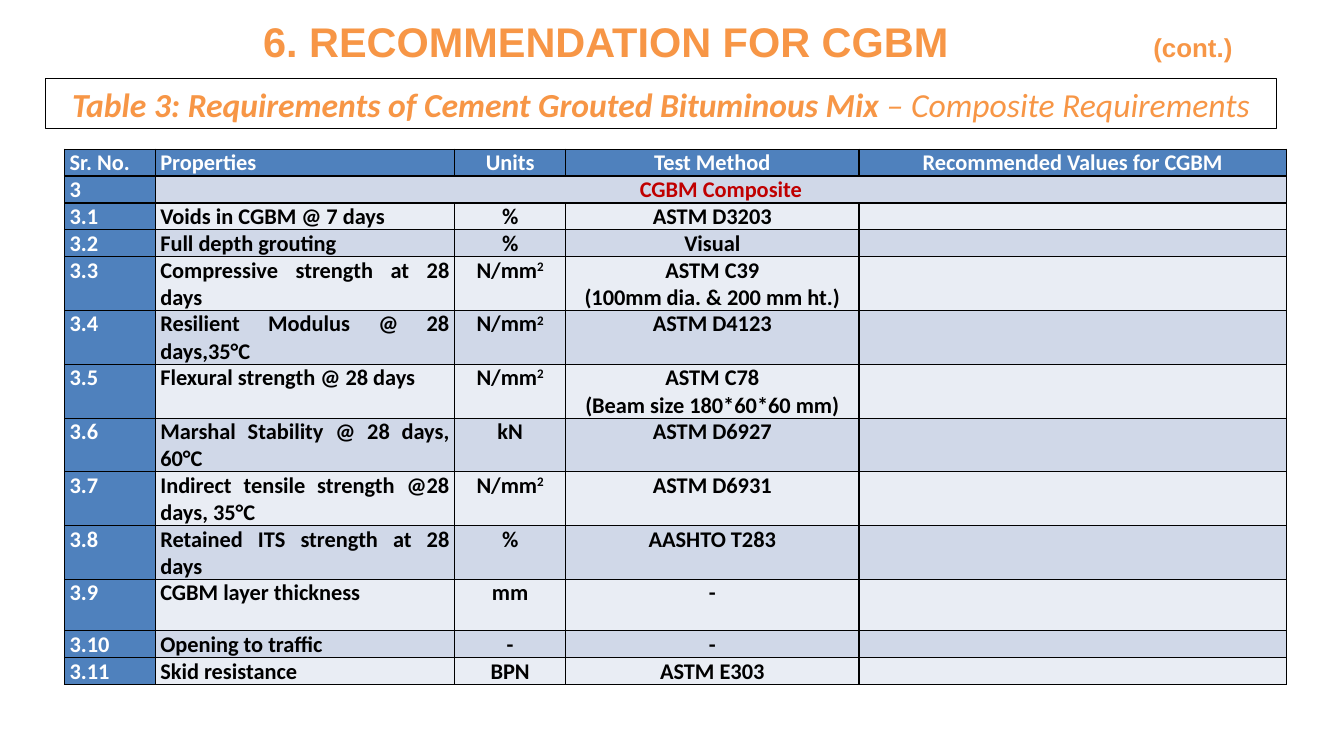
from dataclasses import dataclass
from typing import Any

from lxml.etree import SubElement
from pptx import Presentation
from pptx.dml.color import RGBColor
from pptx.enum.shapes import MSO_SHAPE as Shape
from pptx.enum.text import MSO_ANCHOR as Anchor, PP_ALIGN as Align
from pptx.oxml import parse_xml
from pptx.oxml.ns import nsdecls, qn
from pptx.util import Inches, Pt

ORANGE = RGBColor(0xF7, 0x96, 0x46)
BLUE = RGBColor(0x4F, 0x81, 0xBD)
DARK = RGBColor(0xD0, 0xD8, 0xE8)
LIGHT = RGBColor(0xE9, 0xED, 0xF4)
RED = RGBColor(0xC0, 0x00, 0x00)
WHITE = RGBColor(0xFF, 0xFF, 0xFF)
BLACK = RGBColor(0x00, 0x00, 0x00)

HEAD = {"name": "Arial", "size": Pt(29.6), "bold": True}
CONT = {**HEAD, "size": Pt(18.5)}
TITLE = {"name": "Calibri", "size": Pt(24), "bold": True, "italic": True}
PLAIN = {**TITLE, "bold": False}
BODY = {"name": "Calibri", "size": Pt(16), "bold": True}
FRAME = {"margin_left": Inches(2), "margin_top": Inches(0.05),
         "word_wrap": True, "vertical_anchor": Anchor.MIDDLE}
CELL = {"margin_left": Inches(0.05), "margin_right": Inches(0.05),
        "margin_top": 0, "margin_bottom": 0}

COLS = (0.9, 2.97, 1.1, 2.91, 4.24)
ONE, TWO = 0.26, 0.53


@dataclass
class Row:
    num: str
    prop: str
    unit: str = ""
    test: str = ""
    value: str = ""
    high: float = ONE


ROWS = [
    Row("Sr. No.", "Properties", "Units", "Test Method", "Recommended Values for CGBM"),
    Row("3", "CGBM Composite"),
    Row("3.1", "Voids in CGBM @ 7 days", "%", "ASTM D3203"),
    Row("3.2", "Full depth grouting", "%", "Visual"),
    Row("3.3", "Compressive strength at 28 days", "N/mm^2",
        "ASTM C39\n(100mm dia. & 200 mm ht.)", high=TWO),
    Row("3.4", "Resilient Modulus @ 28 days,35°C", "N/mm^2", "ASTM D4123", high=TWO),
    Row("3.5", "Flexural strength @ 28 days", "N/mm^2",
        "ASTM C78\n(Beam size 180*60*60 mm)", high=TWO),
    Row("3.6", "Marshal Stability @ 28 days, 60°C", "kN", "ASTM D6927", high=TWO),
    Row("3.7", "Indirect tensile strength @28 days, 35°C", "N/mm^2", "ASTM D6931", high=TWO),
    Row("3.8", "Retained ITS strength at 28 days", "%", "AASHTO T283", high=TWO),
    Row("3.9", "CGBM layer thickness", "mm", "-", high=0.51),
    Row("3.10", "Opening to traffic", "-", "-"),
    Row("3.11", "Skid resistance", "BPN", "ASTM E303"),
]


def apply(item: Any, form: dict[str, Any]) -> None:
    for key, val in form.items():
        setattr(item, key, val)


def add_run(para: Any, text: str, form: dict[str, Any], color: RGBColor) -> Any:
    run = para.add_run()
    run.text = text
    apply(run.font, form)
    run.font.color.rgb = color
    return run


def add_head(slide: Any) -> None:
    box = slide.shapes.add_textbox(Inches(0.61), 0, Inches(12), Inches(0.81))
    apply(box.text_frame, FRAME)
    para = box.text_frame.paragraphs[0]
    para.alignment = Align.LEFT
    tabs = SubElement(para._p.get_or_add_pPr(), qn("a:tabLst"))
    SubElement(tabs, qn("a:tab"), pos=str(Inches(8.83)), algn="l")
    add_run(para, "6. RECOMMENDATION FOR CGBM", HEAD, ORANGE)
    add_run(para, "\t(cont.)", CONT, ORANGE)


def add_title(slide: Any) -> None:
    box = slide.shapes.add_shape(Shape.RECTANGLE, Inches(0.45), Inches(0.78),
                                 Inches(12.21), Inches(0.5))
    box.shadow.inherit = False
    box.fill.background()
    box.line.color.rgb = BLACK
    box.line.width = Pt(0.75)
    apply(box.text_frame, {"word_wrap": True, "vertical_anchor": Anchor.TOP})
    para = box.text_frame.paragraphs[0]
    para.alignment = Align.CENTER
    add_run(para, "Table 3: Requirements of Cement Grouted Bituminous Mix ", TITLE, ORANGE)
    add_run(para, "– Composite Requirements", PLAIN, ORANGE)


def add_edges(cell: Any) -> None:
    props = cell._tc.get_or_add_tcPr()
    for pos, side in enumerate("LRTB"):
        props.insert(pos, parse_xml(
            f'<a:ln{side} {nsdecls("a")} w="{Pt(1)}"><a:solidFill>'
            f'<a:srgbClr val="{BLACK}"/></a:solidFill></a:ln{side}>'))


def fill_cell(cell: Any, text: str, fill: RGBColor, color: RGBColor, align: Align) -> None:
    apply(cell, CELL)
    cell.fill.solid()
    cell.fill.fore_color.rgb = fill
    add_edges(cell)
    frame = cell.text_frame
    for pos, line in enumerate(text.split("\n")):
        para = frame.add_paragraph() if pos else frame.paragraphs[0]
        para.alignment = align
        base, _, power = line.partition("^")
        if base:
            add_run(para, base, BODY, color)
        else:
            SubElement(para._p, qn("a:endParaRPr"), sz="1600")
        if power:
            run = add_run(para, power, BODY, color)
            run._r.get_or_add_rPr().set("baseline", "30000")


def add_grid(slide: Any) -> None:
    total = sum(row.high for row in ROWS)
    table = slide.shapes.add_table(len(ROWS), len(COLS), Inches(0.64), Inches(1.48),
                                   Inches(sum(COLS)), Inches(total)).table
    for col, wide in zip(table.columns, COLS):
        col.width = Inches(wide)
    for i, row in enumerate(ROWS):
        table.rows[i].height = Inches(row.high)
        band = i == 1
        texts = (row.num, row.prop, row.unit, row.test, row.value)
        for j, text in enumerate(texts):
            blue = i == 0 or j == 0
            fill = BLUE if blue else DARK if i % 2 else LIGHT
            color = WHITE if blue else RED if band else BLACK
            left = j == 0 or (j == 1 and not band)
            align = Align.JUSTIFY if left else Align.CENTER
            fill_cell(table.cell(i, j), text, fill, color, align)
    table.cell(1, 1).merge(table.cell(1, len(COLS) - 1))


def main() -> None:
    deck = Presentation()
    deck.slide_width, deck.slide_height = Inches(13.33), Inches(7.5)
    slide = deck.slides.add_slide(deck.slide_layouts[6])
    add_head(slide)
    add_title(slide)
    add_grid(slide)
    deck.save("out.pptx")


if __name__ == "__main__":
    main()
